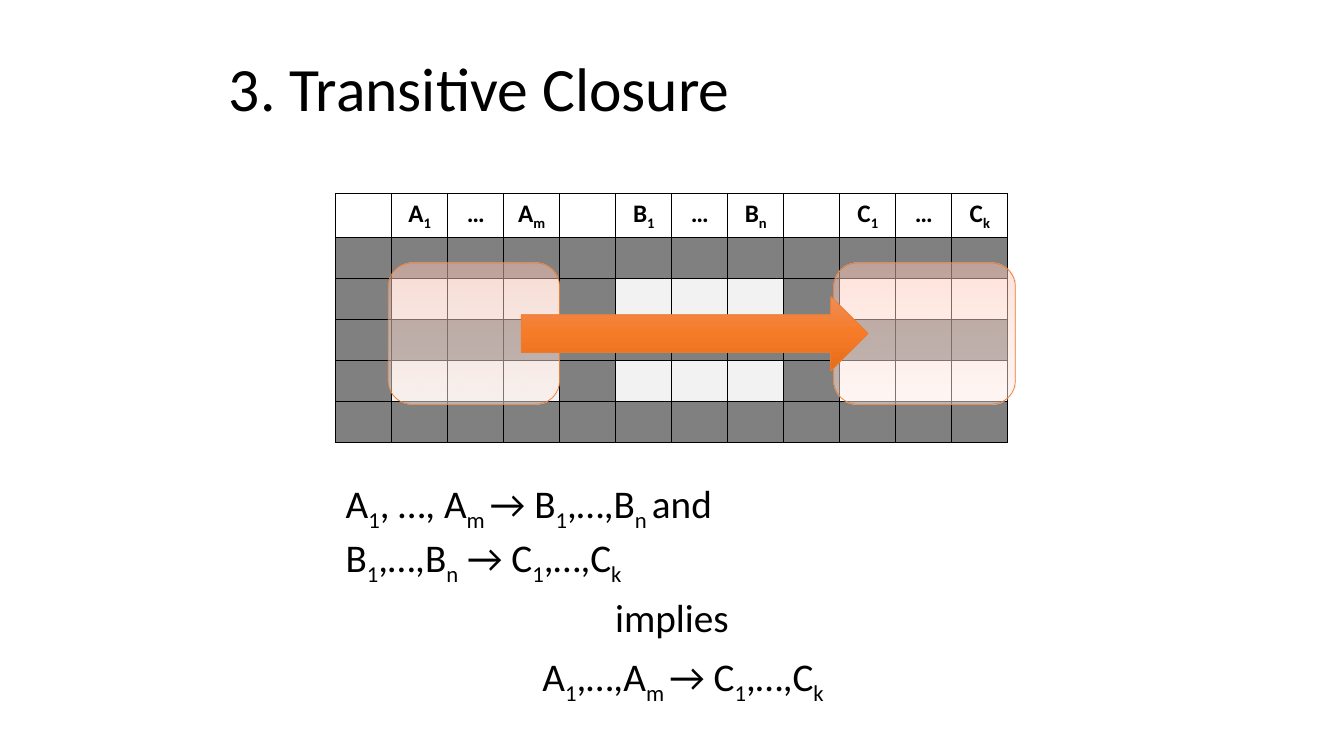
from dataclasses import dataclass

from lxml.etree import SubElement
from pptx import Presentation
from pptx.dml.color import RGBColor
from pptx.enum.shapes import MSO_SHAPE as Shape
from pptx.enum.text import MSO_ANCHOR as Anchor, MSO_AUTO_SIZE as AutoSize, PP_ALIGN as Align
from pptx.oxml.ns import qn
from pptx.util import Inches, Pt


@dataclass(frozen=True)
class Theme:
    font: str = "Calibri"
    black: str = "000000"
    gray: str = "808080"
    light: str = "F2F2F2"
    white: str = "FFFFFF"
    orange: str = "ED7D31"
    # Gradient stops: position in percent, colour
    pale_gradient: tuple = ((0, "FFC7B6"), (35, "FFD7CB"), (100, "FFF0EB"))
    arrow_gradient: tuple = ((0, "F18C57"), (50, "F67B28"), (100, "E56C19"))
    title_size: int = 44
    body_size: int = 28
    cell_size: int = 18


THEME = Theme()

# Every second piece between bars is a subscript
HEADER = ["", "A|1", "…", "A|m", "", "B|1", "…", "B|n", "", "C|1", "…", "C|k"]
PREMISES = ["A|1|, …, A|m |→ B|1|,…,B|n |and", "B|1|,…,B|n| → C|1|,…,C|k"]
CONCLUSION = ["A|1|,…,A|m |→ C|1|,…,C|k"]
ROW_COUNT = 6
OPEN_ROWS = (2, 4)


def apply(target, values):
    for name, value in values.items():
        setattr(target, name, value)


def box_inches(box):
    return [Inches(length) for length in box]


def write(paragraph, text, size, bold=False, align=Align.LEFT):
    paragraph.alignment = align
    for index, piece in enumerate(text.split("|")):
        run = paragraph.add_run()
        run.text = piece
        apply(run.font, {"name": THEME.font, "size": Pt(size), "bold": bold})
        run.font.color.rgb = RGBColor.from_string(THEME.black)
        if index % 2:
            run.font._element.set("baseline", "-25000")


# Title
def add_title(slide, box, text):
    title = slide.shapes.title
    left, top, width, height = box_inches(box)
    apply(title, {"left": left, "top": top, "width": width, "height": height})
    apply(title.text_frame, {"vertical_anchor": Anchor.MIDDLE, "word_wrap": True})
    paragraph = title.text_frame.paragraphs[0]
    paragraph.line_spacing = 0.9
    write(paragraph, text, THEME.title_size)


# Relation table
def cell_color(row, column):
    if row in OPEN_ROWS and column % 4:
        return THEME.white if column > 8 else THEME.light
    return THEME.gray


def add_borders(cell):
    properties = cell._tc.get_or_add_tcPr()
    for index, side in enumerate(("lnL", "lnR", "lnT", "lnB")):
        line = SubElement(properties, qn(f"a:{side}"), w=str(Pt(1)))
        fill = SubElement(line, qn("a:solidFill"))
        SubElement(fill, qn("a:srgbClr"), val=THEME.black)
        properties.insert(index, line)


def add_relation(slide, box):
    frame = slide.shapes.add_table(ROW_COUNT, len(HEADER), *box_inches(box))
    table = frame.table
    apply(table, {"first_row": False, "horz_banding": False})
    for column in table.columns:
        column.width = Inches(box[2] / len(HEADER))
    for row in range(ROW_COUNT):
        for column, label in enumerate(HEADER):
            cell = table.cell(row, column)
            if row == 0:
                cell.fill.background()
                if label:
                    write(cell.text_frame.paragraphs[0], label, THEME.cell_size,
                          bold=True, align=Align.CENTER)
            else:
                cell.fill.solid()
                cell.fill.fore_color.rgb = RGBColor.from_string(cell_color(row, column))
            add_borders(cell)


# Rule statements
def add_statement(slide, box, lines, align=Align.LEFT):
    frame = slide.shapes.add_textbox(*box_inches(box)).text_frame
    apply(frame, {"word_wrap": True, "auto_size": AutoSize.SHAPE_TO_FIT_TEXT})
    for index, line in enumerate(lines):
        paragraph = frame.add_paragraph() if index else frame.paragraphs[0]
        write(paragraph, line, THEME.body_size, align=align)


# Highlights and arrow over the table
def add_gradient_shape(slide, kind, box, stops, opacity=100):
    shape = slide.shapes.add_shape(kind, *box_inches(box))
    shape.shadow.inherit = False
    shape.fill.gradient()
    shape.fill.gradient_angle = 270
    stop_list = shape._element.spPr.find(qn("a:gradFill")).find(qn("a:gsLst"))
    for stop in list(stop_list):
        stop_list.remove(stop)
    for position, color in stops:
        stop = SubElement(stop_list, qn("a:gs"), pos=str(position * 1000))
        color_element = SubElement(stop, qn("a:srgbClr"), val=color)
        if opacity < 100:
            SubElement(color_element, qn("a:alpha"), val=str(opacity * 1000))
    shape.line.color.rgb = RGBColor.from_string(THEME.orange)
    shape.line.width = Pt(0.5)


def add_dependency(slide, box):
    left, top, width, height = box
    source_width, target_width = 1.7, 1.8
    target_left = left + width - target_width
    for x, group_width in ((left, source_width), (target_left, target_width)):
        add_gradient_shape(slide, Shape.ROUNDED_RECTANGLE, (x, top, group_width, height),
                           THEME.pale_gradient, opacity=50)
    arrow_left, arrow_height = left + 1.32, 0.74
    arrow_box = (arrow_left, top + (height - arrow_height) / 2,
                 target_left + 0.34 - arrow_left, arrow_height)
    add_gradient_shape(slide, Shape.RIGHT_ARROW, arrow_box, THEME.arrow_gradient)


def main():
    presentation = Presentation()
    apply(presentation, {"slide_width": Inches(13.33), "slide_height": Inches(7.5)})
    slide = presentation.slides.add_slide(presentation.slide_layouts[5])
    add_title(slide, (2.17, 0.28, 9, 1.25), "3. Transitive Closure")
    add_relation(slide, (3.33, 1.92, 6.67, 2.43))
    add_statement(slide, (3.33, 4.71, 6.67, 1.04), PREMISES)
    add_statement(slide, (3.33, 5.84, 6.67, 0.57), ["implies"], Align.CENTER)
    add_statement(slide, (3.44, 6.42, 6.67, 0.57), CONCLUSION, Align.CENTER)
    add_dependency(slide, (3.85, 2.61, 6.22, 1.4))
    presentation.save("out.pptx")


if __name__ == "__main__":
    main()
